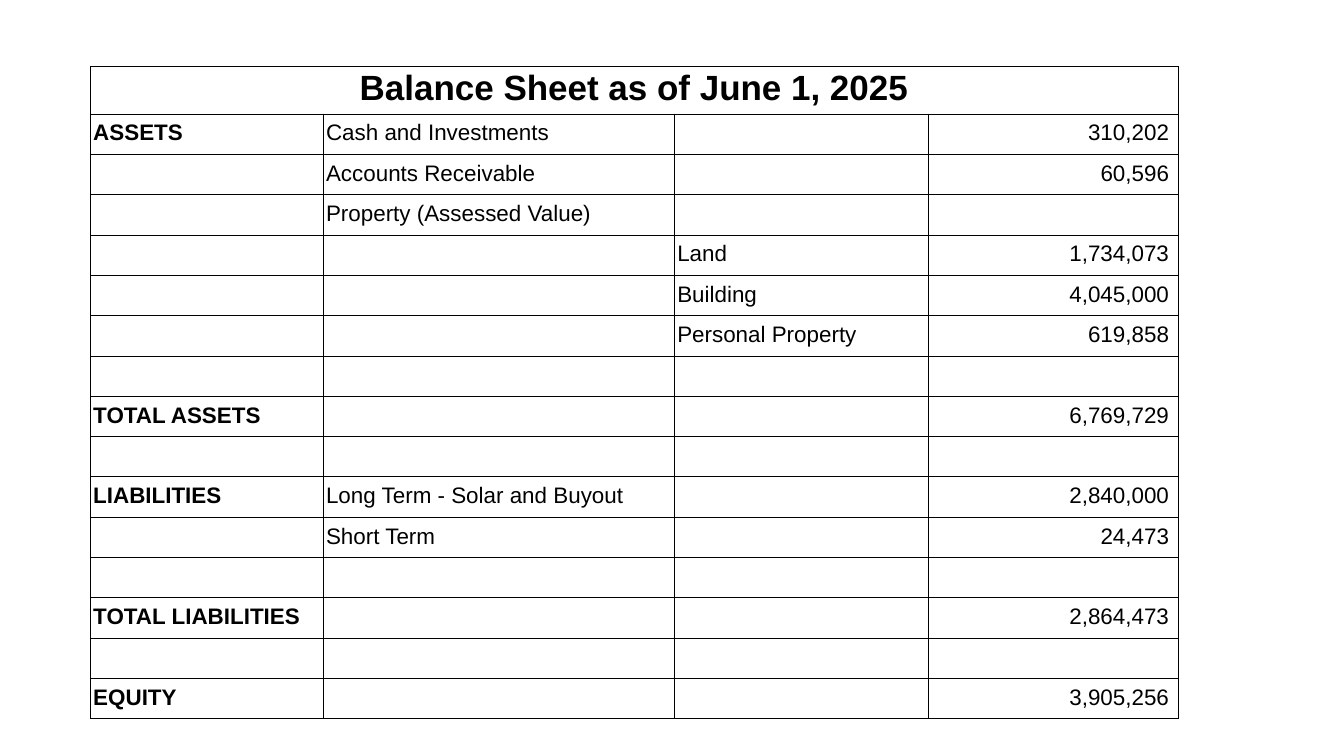
from lxml import etree
from pptx import Presentation
from pptx import util as u
from pptx.dml.color import RGBColor
from pptx.enum import text
from pptx.oxml import ns

BLACK = RGBColor(0x00, 0x00, 0x00)
TITLE = "Balance Sheet as of June 1, 2025"
COLUMN_WIDTHS = [4.62, 6.97, 5.04, 4.96]
TITLE_HEIGHT, ROW_HEIGHT = 0.94, 0.8
CELL_INSET, AMOUNT_INSET = 0.06, 0.18

# Section, account, detail, amount
ROWS = [
    ("ASSETS", "Cash and Investments", "", "310,202"),
    ("", "Accounts Receivable", "", "60,596"),
    ("", "Property (Assessed Value)", "", ""),
    ("", "", "Land", "1,734,073"),
    ("", "", "Building", "4,045,000"),
    ("", "", "Personal Property", "619,858"),
    ("", "", "", ""),
    ("TOTAL ASSETS", "", "", "6,769,729"),
    ("", "", "", ""),
    ("LIABILITIES", "Long Term - Solar and Buyout", "", "2,840,000"),
    ("", "Short Term", "", "24,473"),
    ("", "", "", ""),
    ("TOTAL LIABILITIES", "", "", "2,864,473"),
    ("", "", "", ""),
    ("EQUITY", "", "", "3,905,256"),
]

TITLE_FONT = {"name": "Arial", "size": u.Pt(50), "bold": True}
SECTION_FONT = {"name": "Arial", "size": u.Pt(32), "bold": True}
BODY_FONT = {**SECTION_FONT, "bold": False}


def set_attributes(target, values):
    for name, value in values.items():
        setattr(target, name, value)


def add_borders(cell):
    properties = cell._tc.get_or_add_tcPr()
    for side in ("lnL", "lnR", "lnT", "lnB"):
        line = etree.SubElement(properties, ns.qn(f"a:{side}"), w=str(u.Pt(1)))
        fill = etree.SubElement(line, ns.qn("a:solidFill"))
        etree.SubElement(fill, ns.qn("a:srgbClr"), val=str(BLACK))


def write_cell(cell, words, font, alignment):
    paragraph = cell.text_frame.paragraphs[0]
    set_attributes(paragraph, {"alignment": alignment, "line_spacing": 0.9})
    set_attributes(paragraph.font, font)
    if words:
        run = paragraph.add_run()
        run.text = words
        set_attributes(run.font, font)
        run.font.color.rgb = BLACK


def add_balance_sheet(slide, left, top):
    heights = [TITLE_HEIGHT] + [ROW_HEIGHT] * len(ROWS)
    frame = slide.shapes.add_table(
        len(heights), len(COLUMN_WIDTHS), u.Inches(left), u.Inches(top),
        u.Inches(sum(COLUMN_WIDTHS)), u.Inches(sum(heights)))
    table = frame.table
    set_attributes(table, {"first_row": False, "horz_banding": False})
    for column, width in zip(table.columns, COLUMN_WIDTHS):
        column.width = u.Inches(width)
    for row, height in zip(table.rows, heights):
        row.height = u.Inches(height)

    # Plain ruled cells
    for cell in table.iter_cells():
        add_borders(cell)
        cell.fill.background()
        cell.vertical_anchor = text.MSO_ANCHOR.MIDDLE
        for side in ("left", "right", "top", "bottom"):
            setattr(cell, f"margin_{side}", u.Inches(CELL_INSET))

    # Title across all columns
    title = table.cell(0, 0)
    title.merge(table.cell(0, len(COLUMN_WIDTHS) - 1))
    write_cell(title, TITLE, TITLE_FONT, text.PP_ALIGN.CENTER)

    # Accounts and amounts
    amount_column = len(COLUMN_WIDTHS) - 1
    for row_index, entries in enumerate(ROWS, start=1):
        for column_index, words in enumerate(entries):
            cell = table.cell(row_index, column_index)
            font = SECTION_FONT if column_index == 0 else BODY_FONT
            alignment = text.PP_ALIGN.LEFT
            if column_index == amount_column:
                alignment = text.PP_ALIGN.RIGHT
                cell.margin_right = u.Inches(AMOUNT_INSET)
            write_cell(cell, words, font, alignment)


def main():
    presentation = Presentation()
    presentation.slide_width = u.Inches(26.67)
    presentation.slide_height = u.Inches(15)
    slide = presentation.slides.add_slide(presentation.slide_layouts[6])
    add_balance_sheet(slide, 1.79, 1.32)
    presentation.save("out.pptx")


if __name__ == "__main__":
    main()
